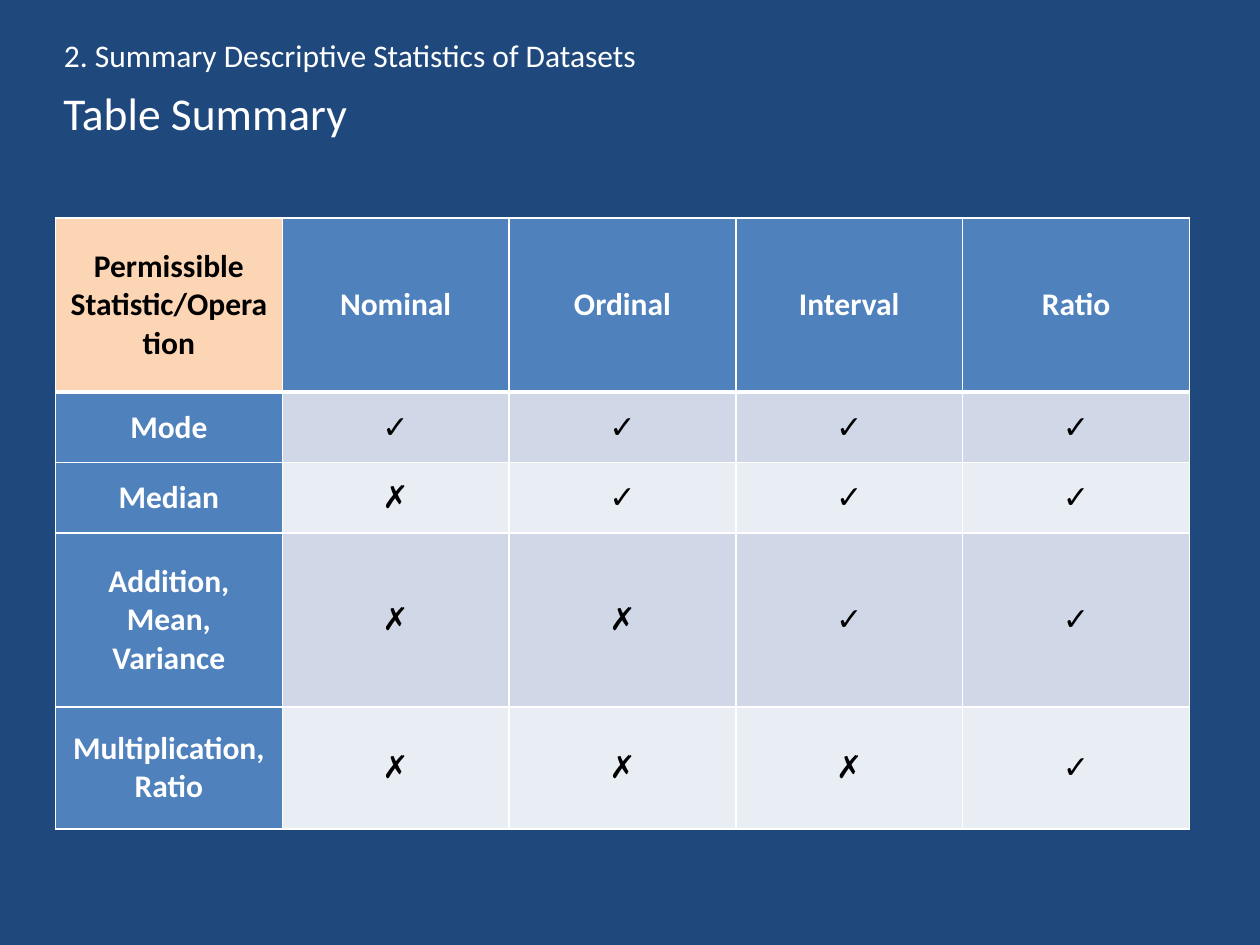
from lxml.etree import SubElement
from pptx import Presentation
from pptx.dml.color import RGBColor
from pptx.enum.text import MSO_ANCHOR, MSO_AUTO_SIZE, PP_ALIGN
from pptx.oxml.ns import qn
from pptx.util import Pt

COLORS = {
    "background": "1F497D",
    "white": "FFFFFF",
    "black": "000000",
    "corner": "FCD5B5",
    "header": "4F81BD",
    "odd": "D0D8E8",
    "even": "E9EDF4",
}
YES, NO = "✓", "✗"
ROWS = [
    ("Permissible Statistic/Operation", "Nominal", "Ordinal", "Interval", "Ratio"),
    ("Mode", YES, YES, YES, YES),
    ("Median", NO, YES, YES, YES),
    ("Addition, Mean, Variance", NO, NO, YES, YES),
    ("Multiplication, Ratio", NO, NO, NO, YES),
]
ROW_HEIGHTS = [99.4, 40.3, 40.3, 99.4, 69.8]


def color(name):
    return RGBColor.from_string(COLORS[name])


def add_run(p, text, size, font="Calibri", fill="white", bold=False):
    r = p.add_run()
    r.text = text
    r.font.size = Pt(size)
    r.font.name = font
    r.font.bold = bold
    r.font.color.rgb = color(fill)


def set_borders(cell, **widths):
    """Draw white cell borders; widths are in points, keyed L, R, T, B."""
    tc_pr = cell._tc.get_or_add_tcPr()
    for side, width in widths.items():
        ln = SubElement(tc_pr, qn(f"a:ln{side}"), w=str(Pt(width)))
        fill = SubElement(ln, qn("a:solidFill"))
        SubElement(fill, qn("a:srgbClr"), val=COLORS["white"])


def add_heading(s, left, top, width):
    sp = s.shapes.add_textbox(Pt(left), Pt(top), Pt(width), Pt(29))
    tf = sp.text_frame
    tf.word_wrap = True
    tf.auto_size = MSO_AUTO_SIZE.SHAPE_TO_FIT_TEXT
    add_run(tf.paragraphs[0], "2. Summary Descriptive Statistics of Datasets", 18)

    title = s.shapes.title
    title.left, title.top = Pt(left - 0.5), Pt(top + 27.5)
    title.width, title.height = Pt(648), Pt(39)
    tf = title.text_frame
    tf.vertical_anchor = MSO_ANCHOR.MIDDLE
    p = tf.paragraphs[0]
    p.alignment = PP_ALIGN.LEFT
    add_run(p, "Table Summary", 26)


def fill_cell(cell, text, row, col):
    set_borders(cell, L=1, R=1, T=3 if row == 1 else 1, B=3 if row == 0 else 1)
    is_header = row == 0 or col == 0
    is_corner = row == col == 0
    if is_corner:
        fill = "corner"
    elif is_header:
        fill = "header"
    else:
        fill = "odd" if row % 2 else "even"
    cell.fill.solid()
    cell.fill.fore_color.rgb = color(fill)
    cell.vertical_anchor = MSO_ANCHOR.MIDDLE
    p = cell.text_frame.paragraphs[0]
    p.alignment = PP_ALIGN.CENTER
    add_run(p, text, 18, "Calibri" if is_header else "Arial",
            "white" if is_header and not is_corner else "black", is_header)


def add_summary_table(s, left, top, width):
    cols = len(ROWS[0])
    frame = s.shapes.add_table(len(ROWS), cols, Pt(left), Pt(top),
                               Pt(width), Pt(sum(ROW_HEIGHTS)))
    table = frame.table
    for column in table.columns:
        column.width = Pt(width / cols)
    for i, (height, texts) in enumerate(zip(ROW_HEIGHTS, ROWS)):
        table.rows[i].height = Pt(height)
        for j, text in enumerate(texts):
            fill_cell(table.cell(i, j), text, i, j)


def main():
    prs = Presentation()
    prs.slide_width, prs.slide_height = Pt(720), Pt(540)
    s = prs.slides.add_slide(prs.slide_layouts[5])
    s.background.fill.solid()
    s.background.fill.fore_color.rgb = color("background")
    add_summary_table(s, 31.7, 124.6, 648)
    add_heading(s, 29.5, 17.3, 643)
    prs.save("out.pptx")


if __name__ == "__main__":
    main()
